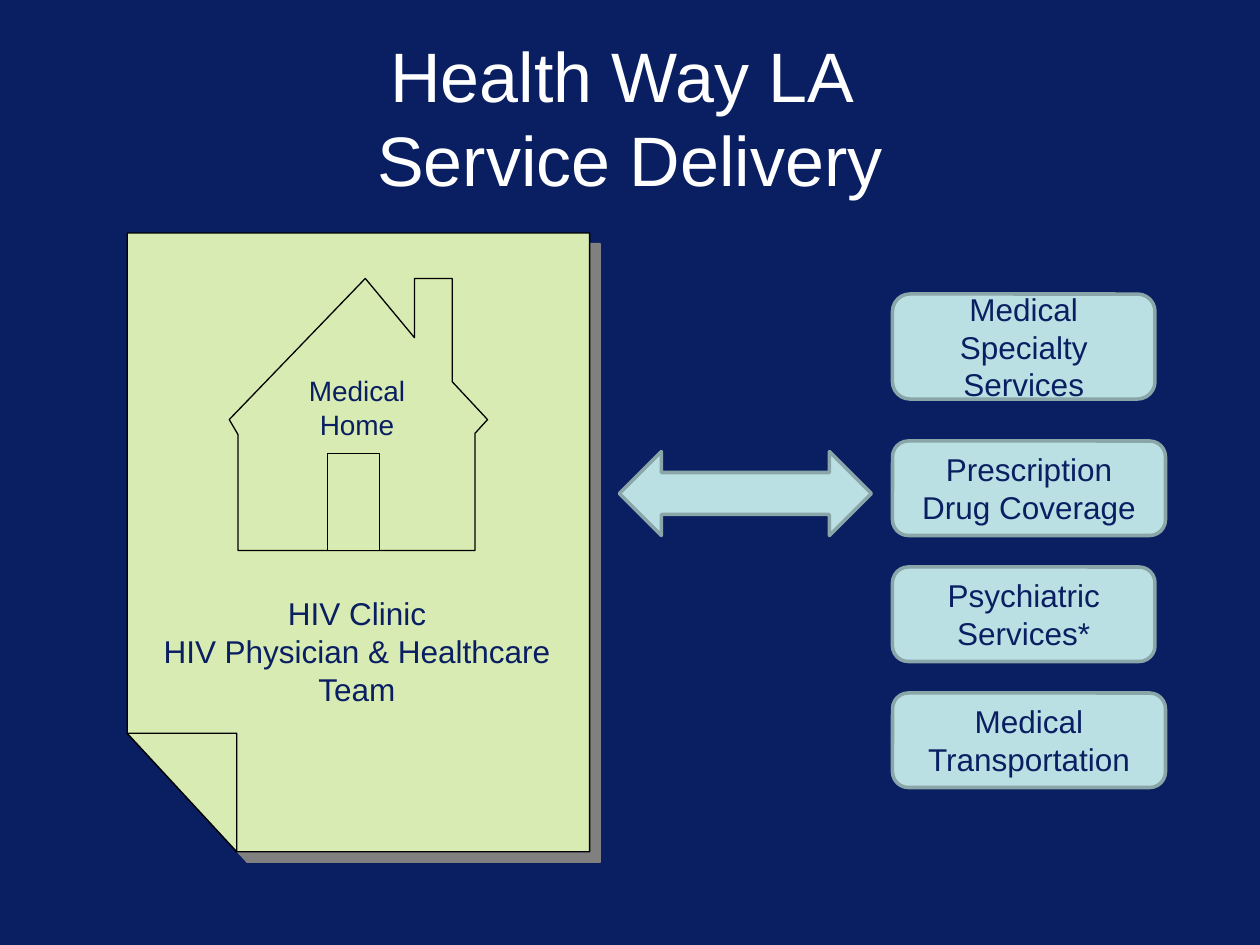
from lxml import etree
from copy import deepcopy
from pptx import Presentation, util as u
from pptx.dml.color import RGBColor
from pptx.enum import shapes, text
from pptx.oxml.ns import qn

# Grid: 120 columns by 90 rows, twelve to the inch
CELL = u.Inches(1) / 12
NAVY, WHITE, BLACK = "091F62", "FFFFFF", "000000"
GREEN, AQUA, TEAL, GREY = "D8EBB3", "BBE0E3", "8AA6A8", "808080"

# Outlines in hundredths of an inch
SHEET = [(283, 676), (188, 676), (101, 582), (101, 185), (468, 185), (468, 676)]
FOLD = [(101, 582), (188, 582), (188, 676)]
HOUSE = [(189, 345), (189, 437), (377, 437), (377, 344), (387, 333), (359, 303),
         (359, 221), (329, 221), (329, 268), (290, 221), (182, 333)]
DOOR = [(260, 437), (260, 360), (301, 360), (301, 437)]

# Top row, width, height, wording
SERVICES = [
    (28, 25, 10, "Medical Specialty Services"),
    (42, 26, 9, "Prescription Drug Coverage"),
    (54, 25, 9, "Psychiatric Services*"),
    (66, 26, 9, "Medical Transportation"),
]


def grid(*cells):
    return [u.Emu(round(cell * CELL)) for cell in cells]


def paint(target, colour):
    target.solid()
    target.fore_color.rgb = RGBColor.from_string(colour)


def style(shape, fill, line, width):
    shape.shadow.inherit = False
    paint(shape.fill, fill)
    paint(shape.line.fill, line)
    shape.line.width = u.Pt(width)


def write(box, lines, size, colour=NAVY, anchor=text.MSO_ANCHOR.TOP):
    frame = box.text_frame
    frame.word_wrap = True
    frame.vertical_anchor = anchor
    frame.text = "\n".join(lines)
    values = {"name": "Arial", "size": u.Pt(size)}
    for para in frame.paragraphs:
        para.alignment = text.PP_ALIGN.CENTER
        for name, value in values.items():
            setattr(para.font, name, value)
        paint(para.font.fill, colour)


def add_label(page, place, lines, size, **look):
    box = page.shapes.add_textbox(*grid(*place))
    write(box, lines, size, **look)


def add_block(page, kind, place):
    block = page.shapes.add_shape(kind, *grid(*place))
    style(block, AQUA, TEAL, 2)
    return block


def add_outlines(page, contours):
    """Draw all contours as one shape, each filled as a path of its own."""
    builder = page.shapes.build_freeform(*contours[0][0], scale=u.Inches(1) / 100)
    builder.add_line_segments(contours[0][1:], close=True)
    for contour in contours[1:]:
        builder.move_to(*contour[0])
        builder.add_line_segments(contour[1:], close=True)
    shape = builder.convert_to_shape()
    joined = shape._element.spPr.find(".//" + qn("a:path"))
    for step in list(joined):
        if step.tag == qn("a:moveTo"):
            single = deepcopy(joined)
            for child in list(single):
                single.remove(child)
            joined.getparent().append(single)
        single.append(step)
    joined.getparent().remove(joined)
    return shape


def add_shadow(shape, colour, distance, degrees):
    effects = shape._element.spPr.find(qn("a:effectLst"))
    shadow = etree.SubElement(effects, qn("a:outerShdw"), blurRad="0",
                              dist=str(u.Pt(distance)), dir=str(degrees * 60000),
                              algn="ctr", rotWithShape="0")
    etree.SubElement(shadow, qn("a:srgbClr"), val=colour)


def main():
    deck = Presentation()
    deck.slide_width, deck.slide_height = grid(120, 90)
    page = deck.slides.add_slide(deck.slide_layouts[6])
    paint(page.background.fill, NAVY)

    # Title
    add_label(page, (6, 3.6, 108, 15), ["Health Way LA \vService Delivery"], 40,
              colour=WHITE, anchor=text.MSO_ANCHOR.MIDDLE)

    # Clinic sheet with the medical home
    sheet = add_outlines(page, [SHEET, FOLD, HOUSE, DOOR])
    style(sheet, GREEN, BLACK, 0.75)
    add_shadow(sheet, GREY, 8.5, 45)
    add_label(page, (26, 35, 16, 7.7), ["Medical Home"], 16)
    add_label(page, (14, 56, 40, 12.1),
              ["HIV Clinic", "HIV Physician & Healthcare Team"], 18)

    # Linked services
    for top, width, height, name in SERVICES:
        block = add_block(page, shapes.MSO_SHAPE.ROUNDED_RECTANGLE,
                          (85, top, width, height))
        write(block, [name], 18, anchor=text.MSO_ANCHOR.MIDDLE)
    add_block(page, shapes.MSO_SHAPE.LEFT_RIGHT_ARROW, (59, 43, 24, 8))

    deck.save("out.pptx")


if __name__ == "__main__":
    main()
